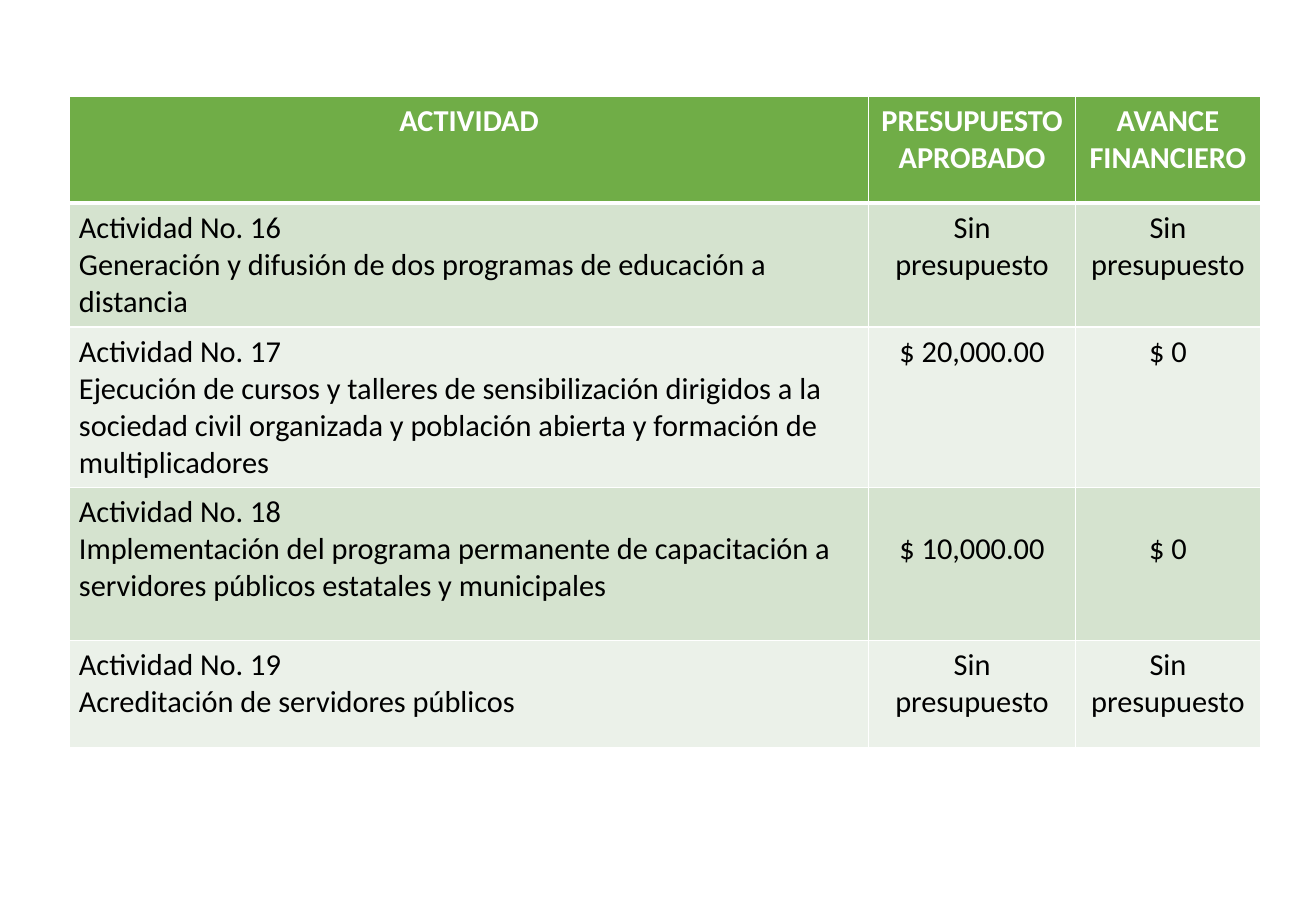
from dataclasses import dataclass

from lxml.etree import SubElement
from pptx import Presentation
from pptx.dml.color import RGBColor
from pptx.enum.text import PP_ALIGN
from pptx.oxml.ns import qn
from pptx.util import Cm, Pt


@dataclass(frozen=True)
class Theme:
    font: str = "Calibri"
    size: int = 18
    header: str = "70AD47"
    bands: tuple = ("D5E3CF", "EBF1E9")
    white: str = "FFFFFF"
    black: str = "000000"
    border: int = 1
    header_border: int = 3


theme = Theme()


def write_text(cell, text, color=theme.black, bold=False, align=PP_ALIGN.LEFT):
    para = cell.text_frame.paragraphs[0]
    para.alignment = align
    for index, line in enumerate(text.split("\n")):
        if index:
            para.add_line_break()
        span = para.add_run()
        span.text = line
        span.font.name = theme.font
        span.font.size = Pt(theme.size)
        span.font.bold = bold
        span.font.color.rgb = RGBColor.from_string(color)


def draw_borders(cell, **widths):
    properties = cell._tc.get_or_add_tcPr()
    for side in ("lnL", "lnR", "lnT", "lnB"):
        width = Pt(widths.get(side, theme.border))
        line = SubElement(properties, qn(f"a:{side}"), w=str(width))
        fill = SubElement(line, qn("a:solidFill"))
        SubElement(fill, qn("a:srgbClr"), val=theme.white)


# Page
deck = Presentation()
deck.slide_width, deck.slide_height = Cm(27.51), Cm(19.05)
page = deck.slides.add_slide(deck.slide_layouts[6])

# Table content
rows = [
    ("ACTIVIDAD", "PRESUPUESTO APROBADO", "AVANCE FINANCIERO"),
    ("Actividad No. 16\nGeneración y difusión de dos programas de educación a distancia",
     "Sin presupuesto", "Sin presupuesto"),
    ("Actividad No. 17\nEjecución de cursos y talleres de sensibilización dirigidos a la "
     "sociedad civil organizada y población abierta y formación de multiplicadores",
     "$ 20,000.00", "$ 0"),
    ("Actividad No. 18\nImplementación del programa permanente de capacitación a "
     "servidores públicos estatales y municipales",
     "$ 10,000.00", "$ 0"),
    ("Actividad No. 19\nAcreditación de servidores públicos",
     "Sin presupuesto", "Sin presupuesto"),
]
column_widths = [16.71, 4.32, 3.87]
row_heights = [2.24, 2.58, 3.36, 3.2, 2.24]
lowered_row = 3  # its amounts line up with the second line of the activity

# Table frame
table = page.shapes.add_table(
    len(rows), len(column_widths), Cm(1.45), Cm(2.01),
    Cm(sum(column_widths)), Cm(sum(row_heights))).table
table.horz_banding = False
for column, width in zip(table.columns, column_widths):
    column.width = Cm(width)
for row, height in zip(table.rows, row_heights):
    row.height = Cm(height)

# Cells
for row_index, texts in enumerate(rows):
    is_header = row_index == 0
    for column_index, text in enumerate(texts):
        cell = table.cell(row_index, column_index)
        is_amount = column_index > 0
        cell.margin_left = cell.margin_right = Cm(0.2)
        cell.margin_bottom = Cm(0.13)
        cell.margin_top = Cm(0.9 if is_amount and row_index == lowered_row else 0.13)

        if is_header:
            draw_borders(cell, lnB=theme.header_border)
        elif row_index == 1:
            draw_borders(cell, lnT=theme.header_border)
        else:
            draw_borders(cell)
        cell.fill.solid()
        cell.fill.fore_color.rgb = RGBColor.from_string(
            theme.header if is_header else theme.bands[(row_index - 1) % 2])

        write_text(cell, text, bold=is_header,
                   color=theme.white if is_header else theme.black,
                   align=PP_ALIGN.CENTER if is_header or is_amount else PP_ALIGN.LEFT)

deck.save("out.pptx")
